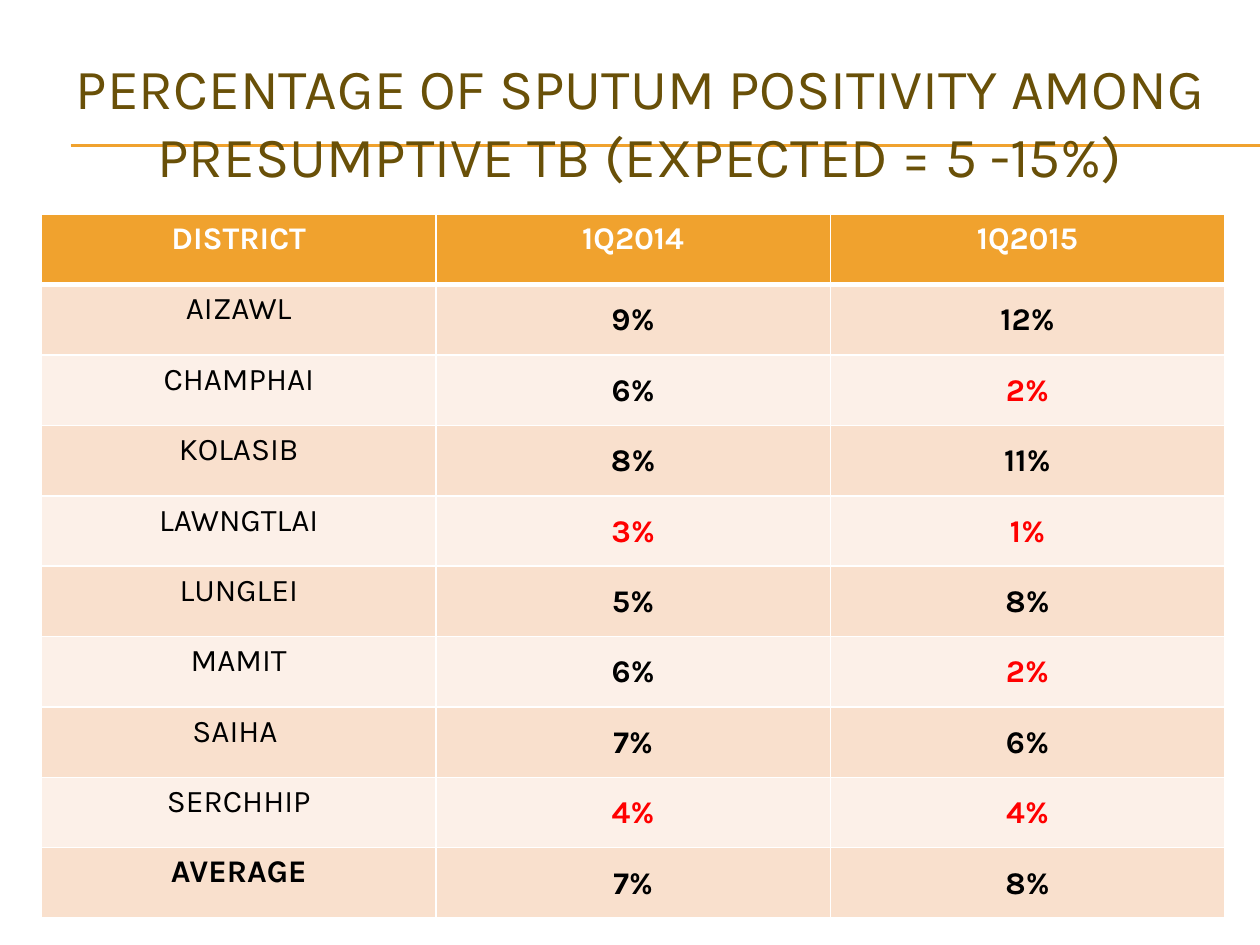
from lxml import etree
from pptx import Presentation
from pptx.dml.color import RGBColor
from pptx.enum.shapes import MSO_CONNECTOR
from pptx.enum.text import MSO_ANCHOR, MSO_AUTO_SIZE, PP_ALIGN
from pptx.oxml.ns import qn
from pptx.util import Inches, Pt

STRAIGHT = MSO_CONNECTOR.STRAIGHT
TOP, MIDDLE = MSO_ANCHOR.TOP, MSO_ANCHOR.MIDDLE
CENTER = PP_ALIGN.CENTER
NO_FIT = MSO_AUTO_SIZE.NONE

FONT = "Karla"
GOLD, BROWN, WHITE, BLACK, RED = "F0A22E", "695008", "FFFFFF", "000000", "FF0000"
BANDS = ["F9E0CD", "FCF0E8"]
LOW = 5  # percentages under the expected range show in red

TITLE = "PERCENTAGE OF SPUTUM POSITIVITY AMONG PRESUMPTIVE TB (EXPECTED = 5 -15%)"
HEADS = ["DISTRICT", "1Q2014", "1Q2015"]
RATES = [
    ("AIZAWL", 9, 12),
    ("CHAMPHAI", 6, 2),
    ("KOLASIB", 8, 11),
    ("LAWNGTLAI", 3, 1),
    ("LUNGLEI", 5, 8),
    ("MAMIT", 6, 2),
    ("SAIHA ", 7, 6),
    ("SERCHHIP", 4, 4),
    ("AVERAGE", 7, 8),
]


def color(text):
    return RGBColor.from_string(text)


def apply(item, values):
    for name, value in values.items():
        setattr(item, name, value)


def write(frame, text, size, tint, bold=False):
    para = frame.paragraphs[0]
    para.alignment = CENTER
    run = para.add_run()
    run.text = text
    apply(run.font, {"name": FONT, "size": Pt(size), "bold": bold})
    run.font.color.rgb = color(tint)


def add_title(slide):
    title = slide.shapes.title
    apply(title, {"left": Inches(0.33), "top": Inches(0.5),
                  "width": Inches(9.5), "height": Inches(0.92)})
    apply(title.text_frame, {"word_wrap": True, "auto_size": NO_FIT,
                             "vertical_anchor": MIDDLE})
    write(title.text_frame, TITLE, 32.4, BROWN)
    return title


def add_rule(slide, title, y):
    rule = slide.shapes.add_connector(
        STRAIGHT, Inches(0.56), Inches(y), Inches(10), Inches(y))
    rule.line.color.rgb = color(GOLD)
    rule.line.width = Pt(0.75)
    etree.SubElement(rule.element.spPr, qn("a:effectLst"))
    title.element.addprevious(rule.element)  # behind the title


def add_edges(cell, widths):
    props = cell._tc.get_or_add_tcPr()
    for i, (side, width) in enumerate(widths.items()):
        edge = etree.Element(qn(f"a:ln{side}"), w=str(Pt(width)))
        fill = etree.SubElement(edge, qn("a:solidFill"))
        etree.SubElement(fill, qn("a:srgbClr"), val=WHITE)
        props.insert(i, edge)


def fill_cell(cell, text, tint, bold, back, top=1, bottom=1):
    write(cell.text_frame, text, 18, tint, bold)
    cell.fill.solid()
    cell.fill.fore_color.rgb = color(back)
    add_edges(cell, {"L": 1, "R": 1, "T": top, "B": bottom})


def add_rates(slide):
    rows, cols = len(RATES) + 1, len(HEADS)
    table = slide.shapes.add_table(
        rows, cols, Inches(0.33), Inches(1.7), Inches(9.39), Inches(5.59)).table

    # Header row
    for col, head in enumerate(HEADS):
        cell = table.cell(0, col)
        cell.vertical_anchor = TOP
        fill_cell(cell, head, WHITE, True, GOLD, bottom=3)

    # District rows
    tight = {"vertical_anchor": MIDDLE, "margin_left": Inches(0.01),
             "margin_right": Inches(0.01), "margin_top": Inches(0.01),
             "margin_bottom": 0}
    for row, (name, *rates) in enumerate(RATES, 1):
        back = BANDS[(row - 1) % 2]
        top = 3 if row == 1 else 1
        fill_cell(table.cell(row, 0), name, BLACK, name == "AVERAGE", back, top)
        for col, rate in enumerate(rates, 1):
            cell = table.cell(row, col)
            apply(cell, tight)
            tint = RED if rate < LOW else BLACK
            fill_cell(cell, f"{rate}%", tint, True, back, top)


def main():
    deck = Presentation()
    apply(deck, {"slide_width": Inches(10), "slide_height": Inches(7.5)})
    slide = deck.slides.add_slide(deck.slide_layouts[5])
    title = add_title(slide)
    for y in (1.15, 1.16):
        add_rule(slide, title, y)
    add_rates(slide)
    deck.save("out.pptx")


if __name__ == "__main__":
    main()
